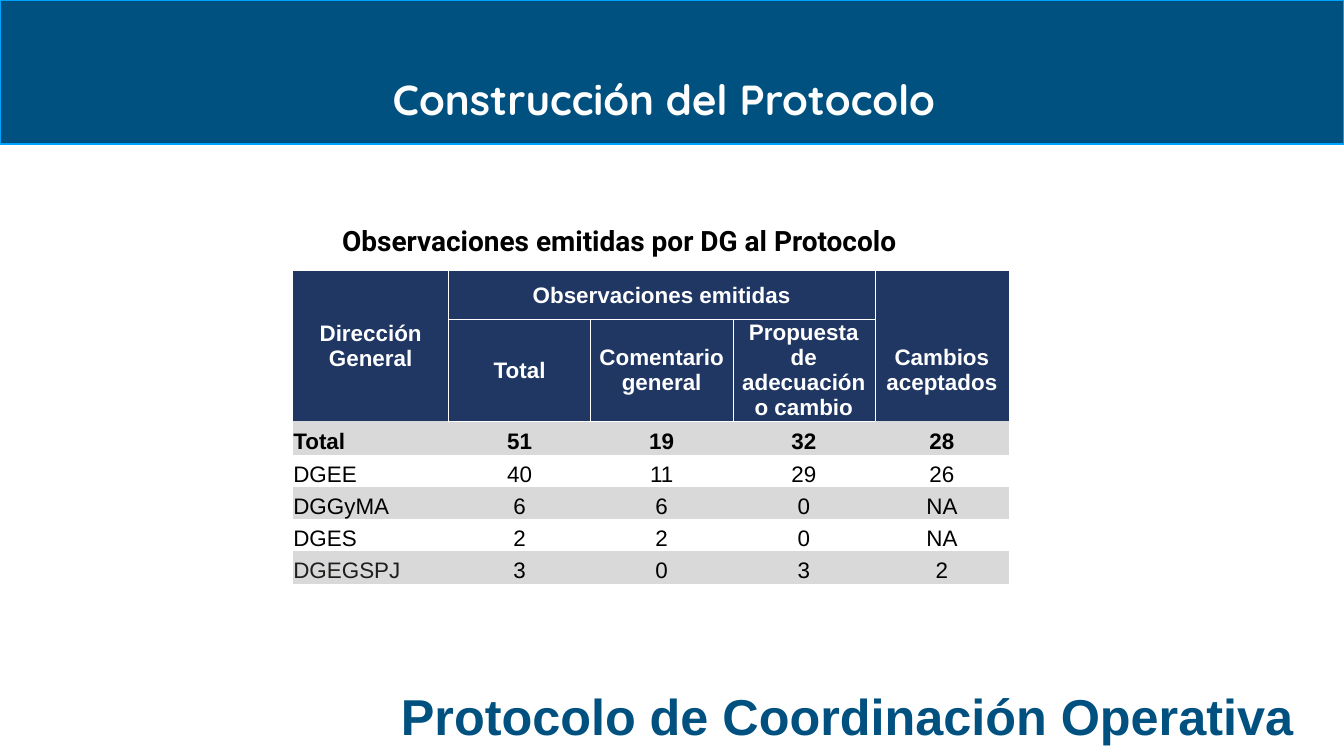
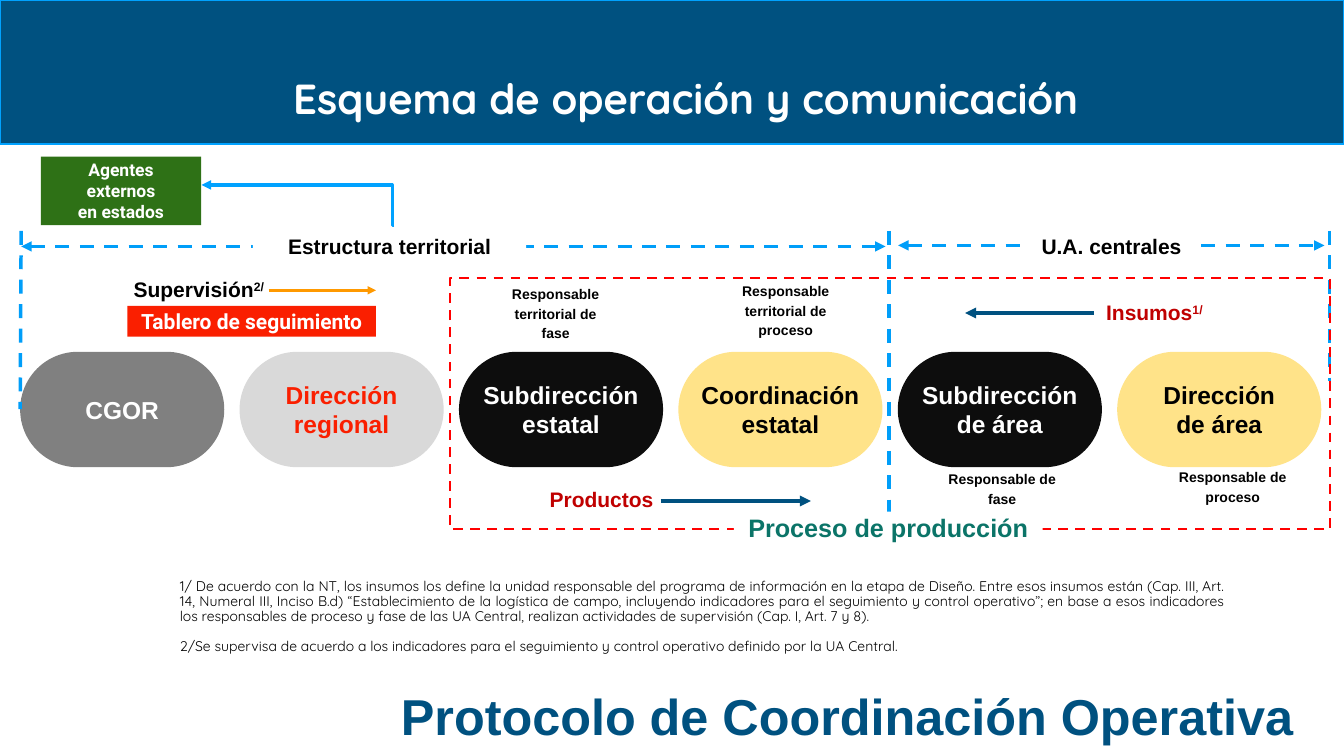
from lxml import etree
from pptx import Presentation
from pptx import util as u
from pptx.dml.color import RGBColor
from pptx.enum import dml, shapes, text
from pptx.oxml import ns

COLORS = {
    "navy": "005180", "sky": "00A2FF", "dash": "009EF9", "header": "203764",
    "band": "D9D9D9", "white": "FFFFFF", "black": "000000", "ink": "201F1E",
    "gray": "808080", "coal": "0D0D0D", "cream": "FFE389", "red": "FA1F00",
    "frame": "FF0000", "wine": "C00000", "teal": "0B7468", "orange": "FF9900",
    "green": "2E7116",
}
COLUMNS, ROWS = 80, 45
WIDTH, HEIGHT = u.Inches(26.67), u.Inches(15)
CENTER, LEFT, JUSTIFY = text.PP_ALIGN.CENTER, text.PP_ALIGN.LEFT, text.PP_ALIGN.JUSTIFY
TOP, MIDDLE, BOTTOM = text.MSO_ANCHOR.TOP, text.MSO_ANCHOR.MIDDLE, text.MSO_ANCHOR.BOTTOM
RECTANGLE = shapes.MSO_SHAPE.RECTANGLE


def rgb(name):
    return RGBColor.from_string(COLORS[name])


def column(count):
    return round(WIDTH * count / COLUMNS)


def row(count):
    return round(HEIGHT * count / ROWS)


def box(left, top, width, height):
    return column(left), row(top), column(width), row(height)


def add_element(parent, tag, **attributes):
    return etree.SubElement(parent, ns.qn(tag), **attributes)


def write(frame, content, size=30, font="Arial", color="black", bold=True,
          align=CENTER, spacing=None, before=0, after=None, superscript=""):
    for index, line in enumerate(content.split("\n")):
        paragraph = frame.paragraphs[0] if index == 0 else frame.add_paragraph()
        properties = paragraph._p.get_or_add_pPr()
        properties.set("marL", "0")
        properties.set("indent", "0")
        add_element(properties, "a:buNone")
        paragraph.alignment = align
        paragraph.space_before = u.Pt(before if index else 0)
        if spacing:
            paragraph.line_spacing = spacing
        if after:
            paragraph.space_after = u.Pt(after)
        for piece, baseline in ((line, None), (superscript, "30000")):
            if not piece:
                continue
            run = paragraph.add_run()
            run.text = piece
            run.font.size = u.Pt(size)
            run.font.name = font
            run.font.bold = bold
            run.font.color.rgb = rgb(color)
            if baseline:
                run._r.get_or_add_rPr().set("baseline", baseline)


def fit(holder, anchor, side=0.1, edge=0.05):
    holder.vertical_anchor = anchor
    holder.margin_left = holder.margin_right = u.Inches(side)
    holder.margin_top = holder.margin_bottom = u.Inches(edge)


class Deck:
    def __init__(self):
        self.presentation = Presentation()
        self.presentation.slide_width = WIDTH
        self.presentation.slide_height = HEIGHT
        self.slide = None

    def start(self, title, place):
        self.slide = self.presentation.slides.add_slide(self.presentation.slide_layouts[1])
        band = self.shape((0, 0, COLUMNS, 8.58), "navy", line="sky", weight=2)
        self.slide.shapes._spTree.insert(2, band._element)
        self.placeholder(0, title, place, size=60, font="Quicksand", color="white", spacing=0.9)
        self.placeholder(1, "Protocolo de Coordinación Operativa", (21.72, 40.62, 57.45, 3.93),
                         side=0.05, size=72, color="navy")

    def placeholder(self, index, content, place, side=0.1, **style):
        shape = self.slide.placeholders[index]
        shape.left, shape.top, shape.width, shape.height = box(*place)
        shape.text_frame.auto_size = text.MSO_AUTO_SIZE.NONE
        fit(shape.text_frame, TOP, side)
        write(shape.text_frame, content, **style)

    def shape(self, place, fill=None, content="", kind=RECTANGLE, line=None, weight=1,
              dashed=False, anchor=MIDDLE, wrap=True, **style):
        shape = self.slide.shapes.add_shape(kind, *box(*place))
        shape.shadow.inherit = False
        if fill:
            shape.fill.solid()
            shape.fill.fore_color.rgb = rgb(fill)
        else:
            shape.fill.background()
        if line:
            shape.line.color.rgb = rgb(line)
            shape.line.width = u.Pt(weight)
        else:
            shape.line.fill.background()
        if dashed:
            shape.line.dash_style = dml.MSO_LINE.DASH
        if content:
            fit(shape.text_frame, anchor)
            shape.text_frame.word_wrap = wrap
            write(shape.text_frame, content, **style)
        return shape

    def label(self, place, content, anchor=TOP, **style):
        frame = self.slide.shapes.add_textbox(*box(*place)).text_frame
        frame.word_wrap = True
        fit(frame, anchor)
        write(frame, content, **style)

    def connector(self, start, end, color="dash", weight=5, dashed=False,
                  head=False, tail=False, bend=None):
        kind = shapes.MSO_CONNECTOR.STRAIGHT if bend is None else shapes.MSO_CONNECTOR.ELBOW
        connector = self.slide.shapes.add_connector(
            kind, column(start[0]), row(start[1]), column(end[0]), row(end[1]))
        connector.line.color.rgb = rgb(color)
        connector.line.width = u.Pt(weight)
        if dashed:
            connector.line.dash_style = dml.MSO_LINE.DASH
        line = connector.line._get_or_add_ln()
        for tag, wanted in (("a:headEnd", head), ("a:tailEnd", tail)):
            if wanted:
                add_element(line, tag, type="triangle")
        properties = connector._element.spPr
        add_element(properties, "a:effectLst")
        if bend is not None:
            guides = properties.find(ns.qn("a:prstGeom")).find(ns.qn("a:avLst"))
            add_element(guides, "a:gd", name="adj1", fmla=f"val {round(bend * 100000)}")

    def table(self, left, top, widths, heights):
        shape = self.slide.shapes.add_table(
            len(heights), len(widths), *box(left, top, sum(widths), sum(heights)))
        table = shape.table
        table.first_row = table.horz_banding = False
        style = table._tbl.tblPr.find(ns.qn("a:tableStyleId"))
        style.text = "{2D5ABB26-0587-4C30-8999-92F81FD0307C}"
        for item, width in zip(table.columns, widths):
            item.width = column(width)
        for item, height in zip(table.rows, heights):
            item.height = row(height)
        return table

    def cell(self, cell, content, fill=None, borders=(), anchor=MIDDLE, **style):
        properties = cell._tc.get_or_add_tcPr()
        for side in borders:
            line = add_element(properties, f"a:ln{side}", w=str(u.Pt(0.5)))
            solid = add_element(line, "a:solidFill")
            add_element(solid, "a:srgbClr", val=COLORS["white"])
        if fill:
            cell.fill.solid()
            cell.fill.fore_color.rgb = rgb(fill)
        else:
            cell.fill.background()
        fit(cell, anchor, 0.01, 0.01)
        cell.margin_bottom = 0
        if content:
            write(cell.text_frame, content, size=32, **style)


def header_borders(index, position):
    inner = 0 < position < 4
    sides = {"L": position > 0, "R": position < 4,
             "T": inner and index == 1, "B": inner and index == 0}
    return [side for side, wanted in sides.items() if wanted]


def build_observations(deck):
    deck.start("Construcción del Protocolo", (21.03, 4.56, 36.96, 3.03))
    headers = [
        ["Dirección General", "Observaciones emitidas", "", "", ""],
        ["", "Total", "Comentario general", "Propuesta de adecuación o cambio", "Cambios aceptados"],
    ]
    counts = [
        ["Total", "51", "19", "32", "28"],
        ["DGEE", "40", "11", "29", "26"],
        ["DGGyMA", "6", "6", "0", "NA"],
        ["DGES", "2", "2", "0", "NA"],
        ["DGEGSPJ", "3", "0", "3", "2"],
    ]
    table = deck.table(17.43, 16.14, [9.27, 8.46, 8.46, 8.46, 7.98],
                       [2.88, 6.03, 2.01] + [1.92] * 4)
    for index, values in enumerate(headers):
        for position, value in enumerate(values):
            deck.cell(table.cell(index, position), value, "header",
                      header_borders(index, position), color="white")
    for index, values in enumerate(counts):
        for position, value in enumerate(values):
            deck.cell(table.cell(index + len(headers), position), value,
                      None if index % 2 else "band", anchor=BOTTOM, bold=index == 0,
                      align=CENTER if position else LEFT,
                      color="ink" if value == "DGEGSPJ" else "black")
    table.cell(0, 0).merge(table.cell(1, 0))
    table.cell(0, 1).merge(table.cell(0, 3))
    deck.label((20.07, 13.14, 40, 2.31), "Observaciones emitidas por DG al Protocolo",
               size=40, font="Roboto", align=JUSTIFY, after=24)


def build_scheme(deck):
    deck.start("Esquema de operación y comunicación", (15.69, 4.53, 50.25, 3.03))
    for start, end in (((1.26, 14.67), (52.71, 14.67)), ((53.46, 14.61), (78.84, 14.61))):
        deck.connector(start, end, dashed=True, head=True, tail=True)

    units = [
        ("CGOR", "gray", "white"),
        ("Dirección\nregional", "band", "red"),
        ("Subdirección\nestatal", "coal", "white"),
        ("Coordinación estatal", "cream", "black"),
        ("Subdirección de área", "coal", "white"),
        ("Dirección\nde área", "cream", "black"),
    ]
    for index, (name, fill, color) in enumerate(units):
        unit = deck.shape((1.2 + 13.06 * index, 20.94, 12.15, 6.87), fill, name,
                          kind=shapes.MSO_SHAPE.ROUNDED_RECTANGLE, size=35, color=color)
        unit.adjustments[0] = 0.5

    for left, foot, bottom in ((1.26, 1.2, 24.36), (52.92, 52.92, 31.59), (79.14, 79.14, 22.68)):
        deck.connector((left, 13.74), (foot, bottom), dashed=True)
    deck.shape((26.79, 16.56, 52.38, 14.94), line="frame", weight=3.5, dashed=True)
    deck.shape((43.68, 30.45, 18.39, 1.89), "white", "Proceso de producción", size=36, color="teal")

    captions = [
        ((61.05, 14.1, 10.23, 1.08), "U.A. centrales", "black", ""),
        ((15.06, 13.83, 16.26, 1.65), "Estructura territorial", "black", ""),
        ((64.08, 17.4, 9.27, 2.37), "Insumos", "wine", "1/"),
        ((31.5, 29.31, 8.61, 0.84), "Productos", "wine", ""),
        ((5.04, 16.77, 13.59, 0.93), "Supervisión", "black", "2/"),
    ]
    for place, name, color, mark in captions:
        deck.shape(place, "white", name, color=color, superscript=mark)

    flows = [
        ((39.33, 29.82), (48.27, 29.82), "navy", 5.25),
        ((65.1, 18.63), (57.45, 18.63), "navy", 5.25),
        ((15.99, 17.28), (22.38, 17.28), "orange", 4),
    ]
    for start, end, color, weight in flows:
        deck.connector(start, end, color, weight, tail=True)

    roles = [
        ((27.84, 16.8, 10.47, 4.17), "Responsable\nterritorial de\nfase"),
        ((41.28, 17.46, 10.98, 2.49), "Responsable\nterritorial de\nproceso"),
        ((54.42, 27.24, 10.47, 4.17), "Responsable de\nfase"),
        ((67.89, 27.93, 10.98, 2.49), "Responsable de\nproceso"),
    ]
    for place, role in roles:
        deck.label(place, role, anchor=MIDDLE, size=20, spacing=u.Pt(14), before=14)

    deck.shape((7.59, 18.21, 14.79, 1.83), "red", "Tablero de seguimiento",
               anchor=TOP, wrap=False, font="Roboto", color="white")
    deck.shape((2.43, 9.33, 9.54, 4.08), "green", "Agentes\nexternos\nen estados",
               anchor=TOP, size=25, font="Roboto", color="white")
    deck.connector((23.46, 13.44), (12, 11.01), "sky", 4.5, tail=True, bend=0.01)

    notes = (
        "1/ De acuerdo con la NT, los insumos los define la unidad responsable del programa de "
        "información en la etapa de Diseño. Entre esos insumos están (Cap. III, Art. 14, Numeral "
        "III, Inciso B.d) “Establecimiento de la logística de campo, incluyendo indicadores para "
        "el seguimiento y control operativo”; en base a esos indicadores los responsables de "
        "proceso y fase de las UA Central, realizan actividades de supervisión (Cap. I, Art. 7 y 8).\n"
        "2/Se supervisa de acuerdo a los indicadores para el seguimiento y control operativo "
        "definido por la UA Central."
    )
    deck.label((10.41, 34.32, 62.79, 4.86), notes, size=20, font="Quicksand", bold=False,
               align=JUSTIFY, spacing=0.9, before=22)


def main():
    deck = Deck()
    build_observations(deck)
    build_scheme(deck)
    deck.presentation.save("out.pptx")


if __name__ == "__main__":
    main()
